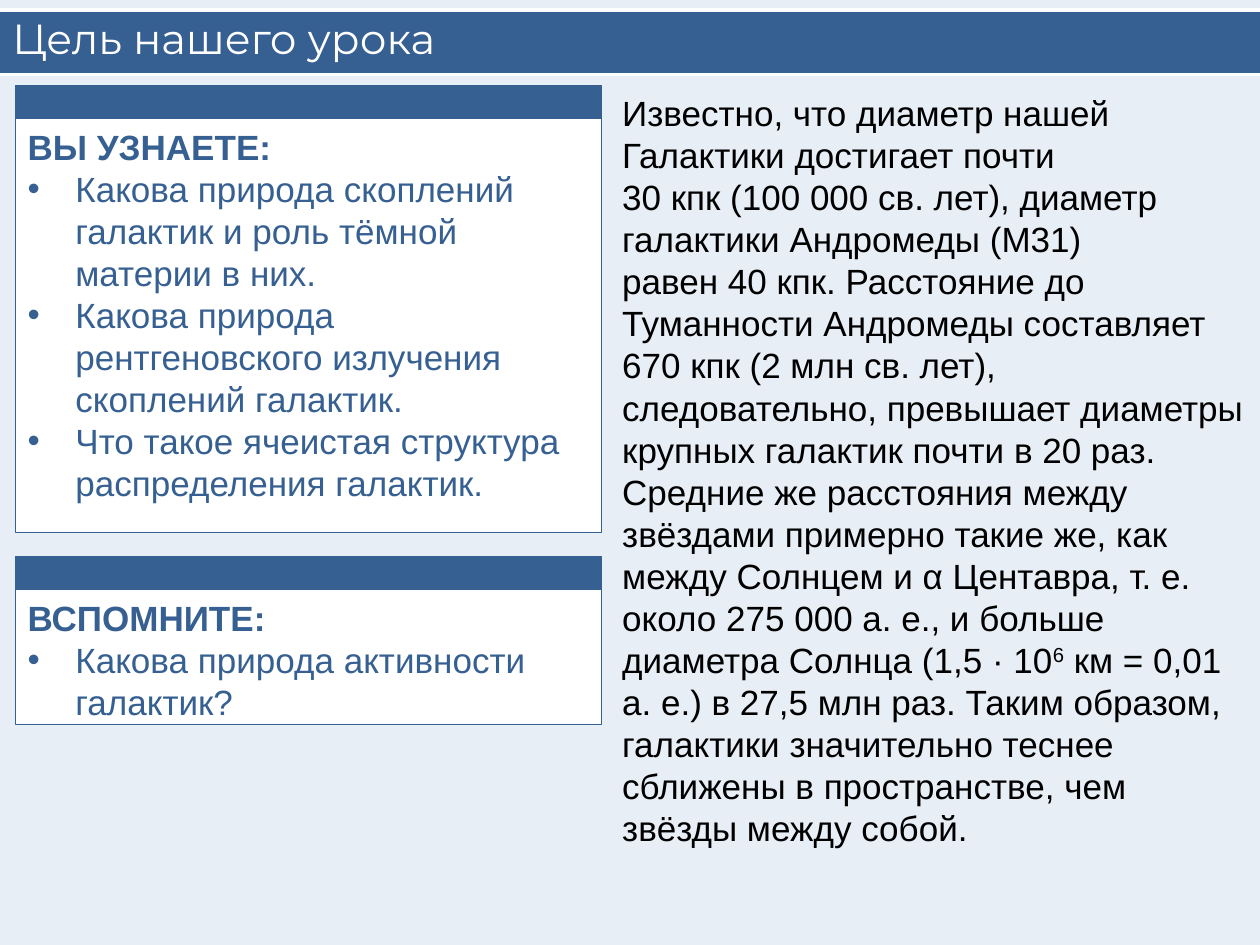
from lxml import etree
from pptx import Presentation
from pptx.dml.color import RGBColor
from pptx.enum.shapes import MSO_CONNECTOR, MSO_SHAPE
from pptx.enum.text import MSO_ANCHOR, MSO_AUTO_SIZE, PP_ALIGN
from pptx.oxml.ns import qn
from pptx.util import Inches, Pt

RECTANGLE = MSO_SHAPE.RECTANGLE
STRAIGHT = MSO_CONNECTOR.STRAIGHT
TOP, MIDDLE = MSO_ANCHOR.TOP, MSO_ANCHOR.MIDDLE
LEFT = PP_ALIGN.LEFT
GROW = MSO_AUTO_SIZE.SHAPE_TO_FIT_TEXT

BLUE = RGBColor(0x37, 0x60, 0x92)
WHITE = RGBColor(0xFF, 0xFF, 0xFF)
BLACK = RGBColor(0x00, 0x00, 0x00)
PALE_BLUE = RGBColor(0xE8, 0xEE, 0xF6)

prs = Presentation()
prs.slide_width, prs.slide_height = Inches(10), Inches(7.5)
COL, ROW = prs.slide_width / 100, prs.slide_height / 100  # one percent of the slide
slide = prs.slides.add_slide(prs.slide_layouts[6])
slide.background.fill.solid()
slide.background.fill.fore_color.rgb = PALE_BLUE


def place(left, top, width, height):
    """Turn percentages of the slide into lengths."""
    return int(left * COL), int(top * ROW), int(width * COL), int(height * ROW)


def write(frame, paragraphs, font="Arial", size=20, color=BLACK, anchor=TOP, heading=False):
    """Fill a frame; every second part of a paragraph is superscript.

    With heading, the first paragraph is bold and the others are bulleted.
    """
    frame.word_wrap = True
    frame.vertical_anchor = anchor
    for number, parts in enumerate(paragraphs):
        paragraph = frame.add_paragraph() if number else frame.paragraphs[0]
        paragraph.alignment = LEFT
        if heading and number:
            properties = paragraph._p.get_or_add_pPr()
            properties.set("marL", str(Inches(0.38)))
            properties.set("indent", str(-Inches(0.38)))
            etree.SubElement(properties, qn("a:buFont")).set("typeface", "Arial")
            etree.SubElement(properties, qn("a:buChar")).set("char", "•")
        for position, part in enumerate(parts):
            run = paragraph.add_run()
            run.text = part
            run.font.name, run.font.size = font, Pt(size)
            run.font.bold = heading and number == 0
            run.font.color.rgb = color
            if position % 2:
                run._r.get_or_add_rPr().set("baseline", "30000")


# Title band with a white rule along each edge
BAND_TOP, BAND_HEIGHT = 1.07, 6.8
band = slide.shapes.add_shape(RECTANGLE, *place(0, BAND_TOP, 100, BAND_HEIGHT))
band.shadow.inherit = False
band.fill.solid()
band.fill.fore_color.rgb = BLUE
band.line.fill.background()
for edge in (BAND_TOP + BAND_HEIGHT, BAND_TOP):
    y = int(edge * ROW)
    rule = slide.shapes.add_connector(STRAIGHT, 0, y, prs.slide_width, y)
    rule.line.color.rgb = WHITE
    rule.line.width = Pt(2)
    etree.SubElement(rule._element.spPr, qn("a:effectLst"))

title = slide.shapes.add_textbox(*place(0, -0.53, 100, 8.93))
write(title.text_frame, [["Цель нашего урока"]],
      font="Montserrat", size=24, color=WHITE, anchor=MIDDLE)

# Explanation on the right
explanation = slide.shapes.add_textbox(*place(48.4, 9.07, 51.6, 82.13))
write(explanation.text_frame, [
    ["Известно, что диаметр нашей Галактики достигает почти"],
    ["30 кпк (100 000 св. лет), диаметр галактики Андромеды (М31)"],
    ["равен 40 кпк. Расстояние до Туманности Андромеды составляет 670 кпк "
     "(2 млн св. лет), следовательно, превышает диаметры крупных галактик "
     "почти в 20 раз. Средние же расстояния между звёздами примерно такие же, "
     "как между Солнцем и α Центавра, т. е. около 275 000 а. е., и больше "
     "диаметра Солнца (1,5 · 10", "6",
     " км = 0,01 а. е.) в 27,5 млн раз. Таким образом,"],
    ["галактики значительно теснее сближены в пространстве, чем"],
    ["звёзды между собой."],
])
explanation.text_frame.auto_size = GROW

# Cards on the left: top, body height, paragraphs
CARD_LEFT, CARD_WIDTH, HEADER_HEIGHT, BODY_OFFSET = 1.2, 46.5, 5.2, 3.5
cards = [
    (9.07, 43.73, [
        ["ВЫ УЗНАЕТЕ:"],
        ["Какова природа скоплений галактик и роль тёмной материи в них."],
        ["Какова природа рентгеновского излучения скоплений галактик."],
        ["Что такое ячеистая структура распределения галактик."],
    ]),
    (58.93, 14.27, [
        ["ВСПОМНИТЕ:"],
        ["Какова природа активности галактик?"],
    ]),
]
for card_top, body_height, points in cards:
    for top, height, fill in ((card_top, HEADER_HEIGHT, BLUE),
                              (card_top + BODY_OFFSET, body_height, WHITE)):
        panel = slide.shapes.add_shape(RECTANGLE, *place(CARD_LEFT, top, CARD_WIDTH, height))
        panel.shadow.inherit = False
        panel.fill.solid()
        panel.fill.fore_color.rgb = fill
        panel.line.color.rgb = BLUE
        panel.line.width = Pt(0.5)
    # The last panel is the white body
    write(panel.text_frame, points, color=BLUE, heading=True)

prs.save("out.pptx")
